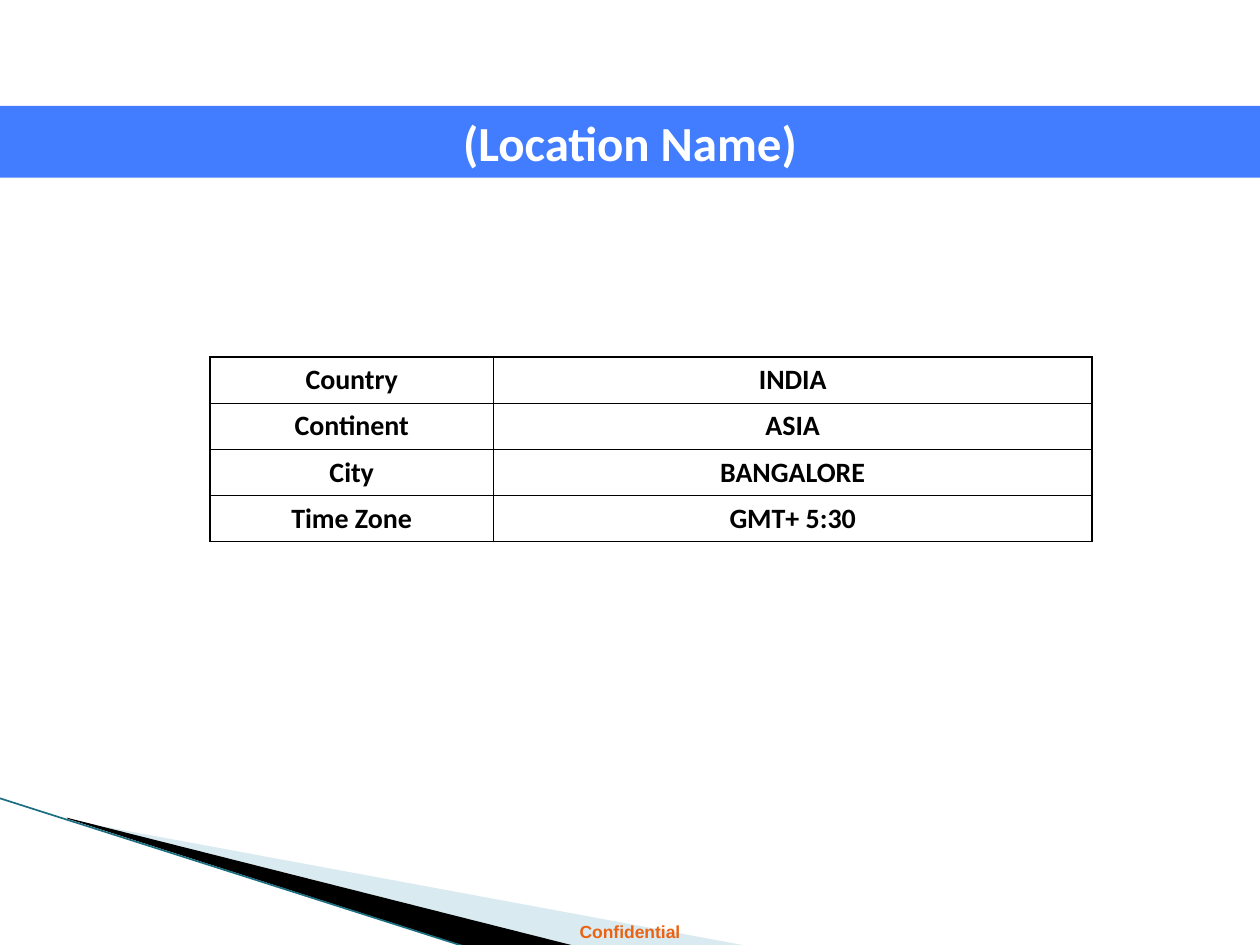
from lxml import etree
from pptx import Presentation
from pptx.dml.color import RGBColor
from pptx.enum.shapes import MSO_CONNECTOR
from pptx.enum.text import MSO_ANCHOR, PP_ALIGN
from pptx.oxml.ns import qn
from pptx.util import Pt

STRAIGHT = MSO_CONNECTOR.STRAIGHT
MIDDLE = MSO_ANCHOR.MIDDLE
CENTER = PP_ALIGN.CENTER

WHITE = RGBColor(0xFF, 0xFF, 0xFF)
BLACK = RGBColor(0x00, 0x00, 0x00)
BANNER_BLUE = RGBColor(0x43, 0x7D, 0xFF)
PALE_BLUE = RGBColor(0xA0, 0xCB, 0xDC)
TEAL = RGBColor(0x1A, 0x6E, 0x80)
ORANGE = RGBColor(0xEB, 0x63, 0x12)

LOCATION_FACTS = [
    ("Country", "INDIA"),
    ("Continent", "ASIA"),
    ("City", "BANGALORE"),
    ("Time Zone", "GMT+ 5:30"),
]


def write_centered(frame, text, font_name, size, color):
    frame.text = text
    paragraph = frame.paragraphs[0]
    paragraph.alignment = CENTER
    font = paragraph.runs[0].font
    font.name, font.size, font.bold = font_name, Pt(size), True
    font.color.rgb = color


def add_wedge(slide, left, top, points, color):
    corners = [(Pt(left + x), Pt(top + y)) for x, y in points]
    builder = slide.shapes.build_freeform(*corners[0])
    builder.add_line_segments(corners[1:], close=True)
    wedge = builder.convert_to_shape()
    wedge.shadow.inherit = False
    wedge.fill.solid()
    wedge.fill.fore_color.rgb = color
    wedge.line.fill.background()
    return wedge


def add_corner_sweep(slide, left, top):
    pale = add_wedge(slide, left, top,
                     [(39.6, 12.7), (428.4, 84.7), (328.3, 84.7), (39.6, 12)],
                     PALE_BLUE)
    pale_color = pale.fill._xPr.find(qn("a:solidFill"))[0]
    etree.SubElement(pale_color, qn("a:alpha"), val="40000")
    add_wedge(slide, left, top,
              [(38.2, 11.3), (329, 84.7), (267.8, 85.4), (38.9, 12)], BLACK)
    edge = slide.shapes.add_connector(
        STRAIGHT, Pt(left - 0.7), Pt(top), Pt(left + 267.1), Pt(top + 85.4))
    edge.line.color.rgb = TEAL
    edge.line.width = Pt(0.95)
    etree.SubElement(edge._element.spPr, qn("a:effectLst"))


def add_footer(slide, left, top, width, height):
    footer = slide.shapes.add_textbox(Pt(left), Pt(top), Pt(width), Pt(height))
    footer.text_frame.word_wrap = True
    write_centered(footer.text_frame, "Confidential", "Arial", 10, ORANGE)


def place_banner(slide, left, top, width, height):
    banner = slide.shapes.title
    banner.left, banner.top = Pt(left), Pt(top)
    banner.width, banner.height = Pt(width), Pt(height)
    banner.fill.solid()
    banner.fill.fore_color.rgb = BANNER_BLUE
    banner.text_frame.vertical_anchor = MIDDLE
    write_centered(banner.text_frame, "(Location Name)", "Calibri", 28, WHITE)


def set_border(cell, side, width):
    border = etree.Element(qn(f"a:{side}"), w=str(Pt(width)))
    fill = etree.SubElement(border, qn("a:solidFill"))
    etree.SubElement(fill, qn("a:srgbClr"), val=str(BLACK))
    return border


def add_facts_table(slide, left, top, width, height):
    rows, columns = len(LOCATION_FACTS), 2
    facts = slide.shapes.add_table(
        rows, columns, Pt(left), Pt(top), Pt(width), Pt(height)).table
    facts.first_row = facts.horz_banding = False
    label_width = 162
    facts.columns[0].width = Pt(label_width)
    facts.columns[1].width = Pt(width - label_width)
    for r, fact in enumerate(LOCATION_FACTS):
        for c, text in enumerate(fact):
            cell = facts.cell(r, c)
            cell.fill.background()
            cell.vertical_anchor = MIDDLE
            cell.margin_top = cell.margin_bottom = Pt(3.2)
            write_centered(cell.text_frame, text, "Calibri", 16, BLACK)
            outer_sides = {"lnL": c == 0, "lnR": c == columns - 1,
                           "lnT": r == 0, "lnB": r == rows - 1}
            for position, (side, outer) in enumerate(outer_sides.items()):
                border = set_border(cell, side, 1 if outer else 0.5)
                cell._tc.get_or_add_tcPr().insert(position, border)


def main():
    presentation = Presentation()
    presentation.slide_width, presentation.slide_height = Pt(720), Pt(540)
    slide = presentation.slides.add_slide(presentation.slide_layouts[5])
    add_corner_sweep(slide, 0, 456)
    add_footer(slide, 0, 522.7, 720, 19.4)
    place_banner(slide, 0, 60.5, 720, 41)
    add_facts_table(slide, 120, 204, 504, 105.6)
    presentation.save("out.pptx")


if __name__ == "__main__":
    main()
